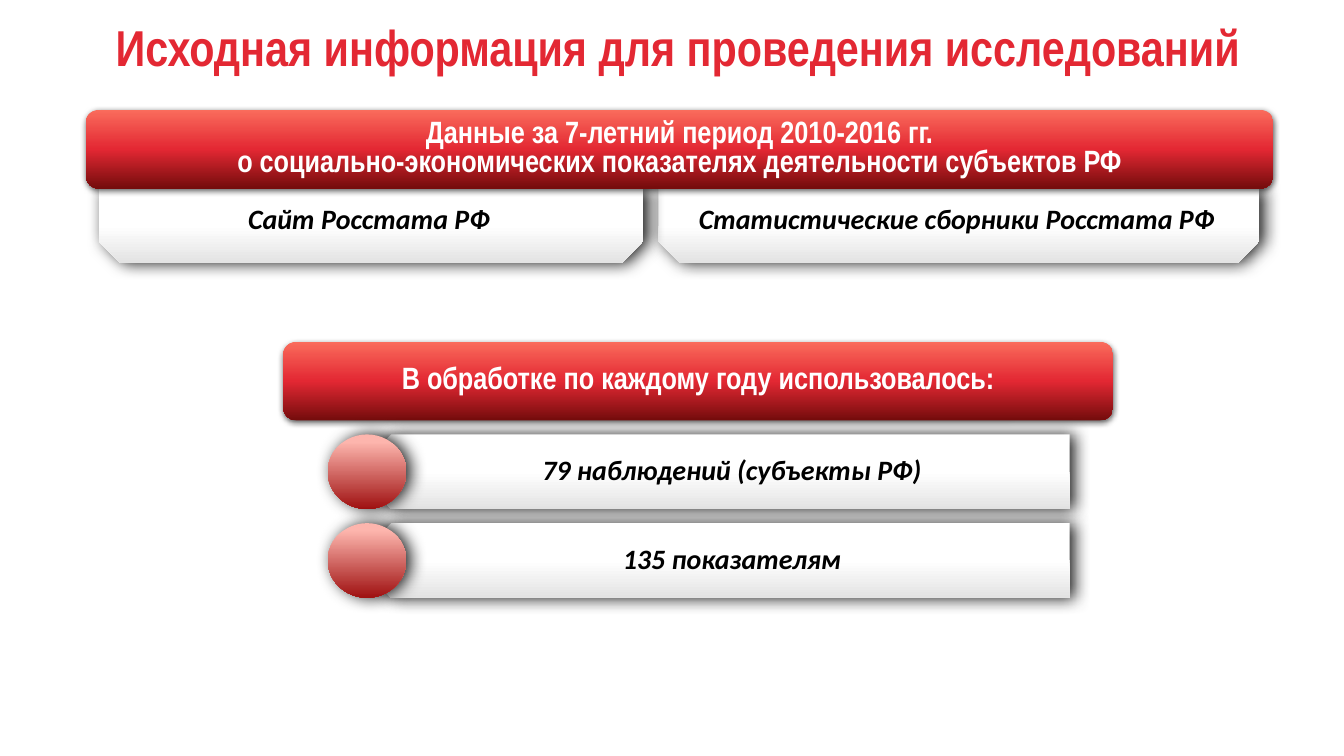
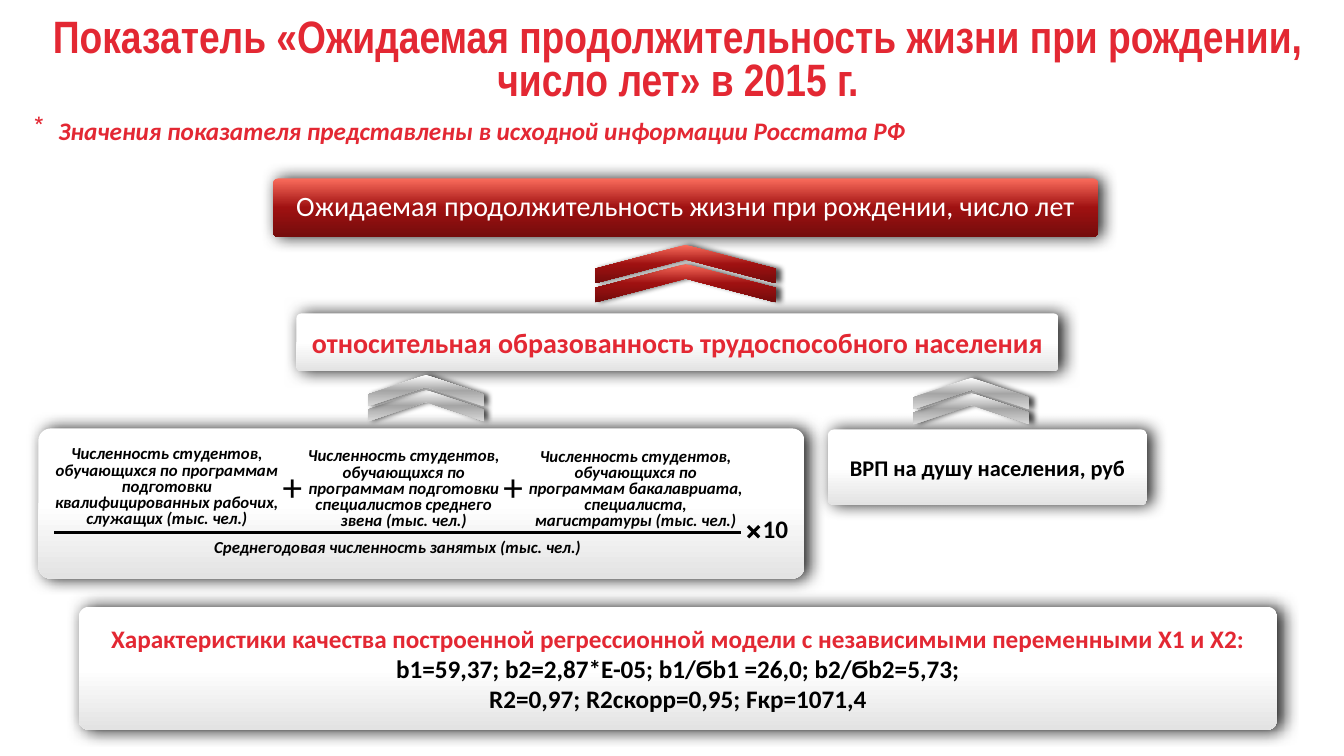
"""Build two slides on regional statistics and a life expectancy model."""
from lxml import etree
from pptx import Presentation
from pptx.dml.color import RGBColor
from pptx.enum import shapes, text
from pptx.oxml import ns
from pptx.util import Pt

PX = 9144
SHAPE = shapes.MSO_SHAPE
RED, BLACK, WHITE = "E32833", "000000", "FFFFFF"
HEAD_FONT, BODY_FONT = "Arial Narrow", "Calibri"
PALE = ((0, WHITE), (50, WHITE), (100, "E3E3E3"))
BRIGHT = ((0, "FA6C5C"), (50, RED), (100, "740C0C"))
DEEP = ((0, "FA6C5C"), (50, "9F1111"), (100, "740C0C"))
SILVER = ((0, WHITE), (50, "A5A5A5"), (100, "D9D9D9"))
BALL = ((10, "FDB5AD"), (100, "9F1111"))
SOFT = (87, 12, 3, 0)
BELOW = (63, 4.5, 1.5, 90)
TIGHT = (70, 4, 3, 0)


def emu(*lengths):
    """Turn px lengths into EMU."""
    return [n * PX for n in lengths]


def rgb(color):
    """Turn a hex string into a colour."""
    return RGBColor.from_string(color)


def child(parent, tag, **attrs):
    """Append a DrawingML element and return it."""
    values = {k: str(v) for k, v in attrs.items()}
    return etree.SubElement(parent, ns.qn("a:" + tag), values)


def finish(sp, stops, shadow):
    """Give a shape a downward gradient and an outer shadow, with no line."""
    spPr = sp._element.spPr
    sp.fill.background()
    sp.line.fill.background()
    grad = etree.Element(ns.qn("a:gradFill"), rotWithShape="0")
    stop_list = child(grad, "gsLst")
    for pos, color in stops:
        child(child(stop_list, "gs", pos=pos * 1000), "srgbClr", val=color)
    child(grad, "lin", ang=90 * 60000, scaled=0)
    spPr.replace(spPr.find(ns.qn("a:noFill")), grad)

    alpha, blur, dist, angle = shadow
    sp.shadow.inherit = False
    outer = child(spPr.find(ns.qn("a:effectLst")), "outerShdw",
                  blurRad=Pt(blur), dist=Pt(dist), dir=angle * 60000,
                  algn="ctr", rotWithShape=0)
    child(child(outer, "srgbClr", val=BLACK), "alpha", val=alpha * 1000)
    return sp


def write(sp, *lines, size=20, color=BLACK, font=BODY_FONT, bold=True,
          italic=False, spacing=1.0, align=text.PP_ALIGN.CENTER,
          inset=(8, 8, 8, 8), bullet=None):
    """Add one paragraph per line to a shape."""
    tf = sp.text_frame
    tf.word_wrap = True
    tf.vertical_anchor = text.MSO_ANCHOR.MIDDLE
    (tf.margin_left, tf.margin_top,
     tf.margin_right, tf.margin_bottom) = emu(*inset)
    for line in lines:
        p = tf.add_paragraph() if tf.text else tf.paragraphs[0]
        p.alignment = align
        p.line_spacing = spacing
        if bullet:
            pPr = p._p.get_or_add_pPr()
            pPr.set("marL", str(24 * PX))
            pPr.set("indent", str(-24 * PX))
            child(pPr, "buChar", char=bullet)
        r = p.add_run()
        r.text = line
        r.font.name, r.font.size = font, Pt(size)
        r.font.bold, r.font.italic = bold, italic
        r.font.color.rgb = rgb(color)


def label(s, box, *lines, inset=(10, 5, 10, 5), **fmt):
    """Add a text box."""
    write(s.shapes.add_textbox(*emu(*box)), *lines, inset=inset, **fmt)


def title(s, line, height, size):
    """Add the slide title."""
    label(s, (24, 15, 1297, height), line, size=size, color=RED,
          font=HEAD_FONT, spacing=0.8)


def panel(s, box, stops=PALE, shadow=SOFT, kind=SHAPE.ROUNDED_RECTANGLE,
          adj=(0.083,)):
    """Add a gradient preset shape."""
    sp = s.shapes.add_shape(kind, *emu(*box))
    for i, value in enumerate(adj):
        sp.adjustments[i] = value
    return finish(sp, stops, shadow)


def banner(s, box, *lines):
    """Add a red heading bar."""
    write(panel(s, box, BRIGHT, BELOW, adj=()), *lines, size=22, color=WHITE,
          font=HEAD_FONT, spacing=0.8, inset=(10, 5, 10, 5))


def tab(s, left, width, line):
    """Add a pale tab with cut lower corners."""
    sp = panel(s, (left, 187, width, 74), kind=SHAPE.SNIP_2_SAME_RECTANGLE,
               adj=(0, 0.29))
    write(sp, line, italic=True, spacing=0.9, inset=(12, 8, 16, 8))


def ball_row(s, top, line):
    """Add a pointed bar with a ball on its left end."""
    left, notch, right, height = 353, 388, 1061, 74
    bottom = top + height
    fb = s.shapes.build_freeform(right, bottom, scale=PX)
    fb.add_line_segments([(notch, bottom), (left, top + height // 2),
                          (notch, top), (right, top)])
    bar = finish(fb.convert_to_shape(), PALE, SOFT)
    write(bar, line, italic=True, spacing=0.9, inset=(54, 8, 16, 8))
    panel(s, (325, top, 78, height), BALL, kind=SHAPE.OVAL, adj=())


def chevrons(s, cx, cy, depth, span, step, stops):
    """Add two stacked upward chevrons, the lower one centred at cx, cy."""
    for y in (cy, cy - step):
        box = (cx - depth // 2, y - span // 2, depth, span)
        sp = panel(s, box, stops, TIGHT, SHAPE.CHEVRON, (0.623,))
        sp.rotation = 270


def line(s, *ends):
    """Add a black line."""
    cn = s.shapes.add_connector(shapes.MSO_CONNECTOR.STRAIGHT, *emu(*ends))
    cn.line.color.rgb = rgb(BLACK)
    cn.line.width = Pt(2.25)
    child(cn._element.spPr, "effectLst")


def formula(s):
    """Add the card with the education fraction."""
    panel(s, (38, 425, 760, 149))
    terms = (
        ((43, 441, 245, 85), "Численность студентов, обучающихся по программам "
         "подготовки квалифицированных рабочих, служащих (тыс. чел.)"),
        ((293, 444, 215, 83), "Численность студентов, обучающихся по программам "
         "подготовки специалистов среднего звена (тыс. чел.)"),
        ((512, 445, 237, 82), "Численность студентов, обучающихся по программам "
         "бакалавриата, специалиста, магистратуры (тыс. чел.)"),
        ((54, 530, 681, 28), "Среднегодовая численность занятых (тыс. чел.)"),
    )
    for box, term in terms:
        label(s, box, term, size=12, italic=True, spacing=0.8)
    line(s, 54, 528, 735, 528)
    line(s, 753, 522, 742, 533)
    line(s, 742, 522, 753, 533)
    label(s, (739, 513, 60, 28), "10", size=18, spacing=0.8)
    for left in (260, 479):
        label(s, (left, 472, 60, 28), "+", size=28, bold=False, spacing=0.8)


def sources_slide(s):
    """Fill the slide on source data."""
    title(s, "Исходная информация для проведения исследований", 73, 36)
    tab(s, 653, 596, "Статистические сборники Росстата РФ")
    tab(s, 98, 540, "Сайт Росстата РФ")
    banner(s, (85, 109, 1178, 78), "Данные за 7-летний период 2010-2016 гг.",
           "о социально-экономических показателях деятельности субъектов РФ")
    banner(s, (281, 339, 823, 78), "В обработке по каждому году использовалось:")
    for i, row in enumerate(("79 наблюдений (субъекты РФ)", "135 показателям")):
        ball_row(s, 431 + 88 * i, row)


def model_slide(s):
    """Fill the slide on the life expectancy model."""
    title(s, "Показатель «Ожидаемая продолжительность жизни при рождении, "
          "число лет» в 2015 г.", 93, 32.4)
    quality = panel(s, (78, 602, 1189, 122))
    write(quality, "Характеристики качества построенной регрессионной модели "
          "с независимыми переменными X1 и X2:", size=18, color=RED)
    write(quality, "b1=59,37; b2=2,87*E-05; b1/Ϭb1 =26,0; b2/Ϭb2=5,73;",
          "R2=0,97; R2скорр=0,95; Fкр=1071,4", size=18)
    label(s, (24, 109, 1079, 40), "Значения показателя представлены в исходной "
          "информации Росстата РФ", size=18, color=RED, italic=True,
          align=text.PP_ALIGN.LEFT, bullet="*")
    write(panel(s, (271, 177, 818, 58), DEEP),
          "Ожидаемая продолжительность жизни при рождении, число лет",
          color=WHITE, bold=False, spacing=0.9)
    chevrons(s, 680, 281, 38, 180, 19, DEEP)
    write(panel(s, (294, 311, 756, 57)),
          "относительная образованность трудоспособного населения", color=RED)
    write(panel(s, (821, 426, 317, 75)), "ВРП на душу населения, руб", size=16)
    formula(s)
    for cx, cy in ((422, 402), (963, 405)):
        chevrons(s, cx, cy, 31, 115, 15, SILVER)


def main():
    """Build and save the presentation."""
    prs = Presentation()
    prs.slide_width, prs.slide_height = emu(1333, 750)
    for fill_slide in (sources_slide, model_slide):
        fill_slide(prs.slides.add_slide(prs.slide_layouts[6]))
    prs.save("out.pptx")


if __name__ == "__main__":
    main()
